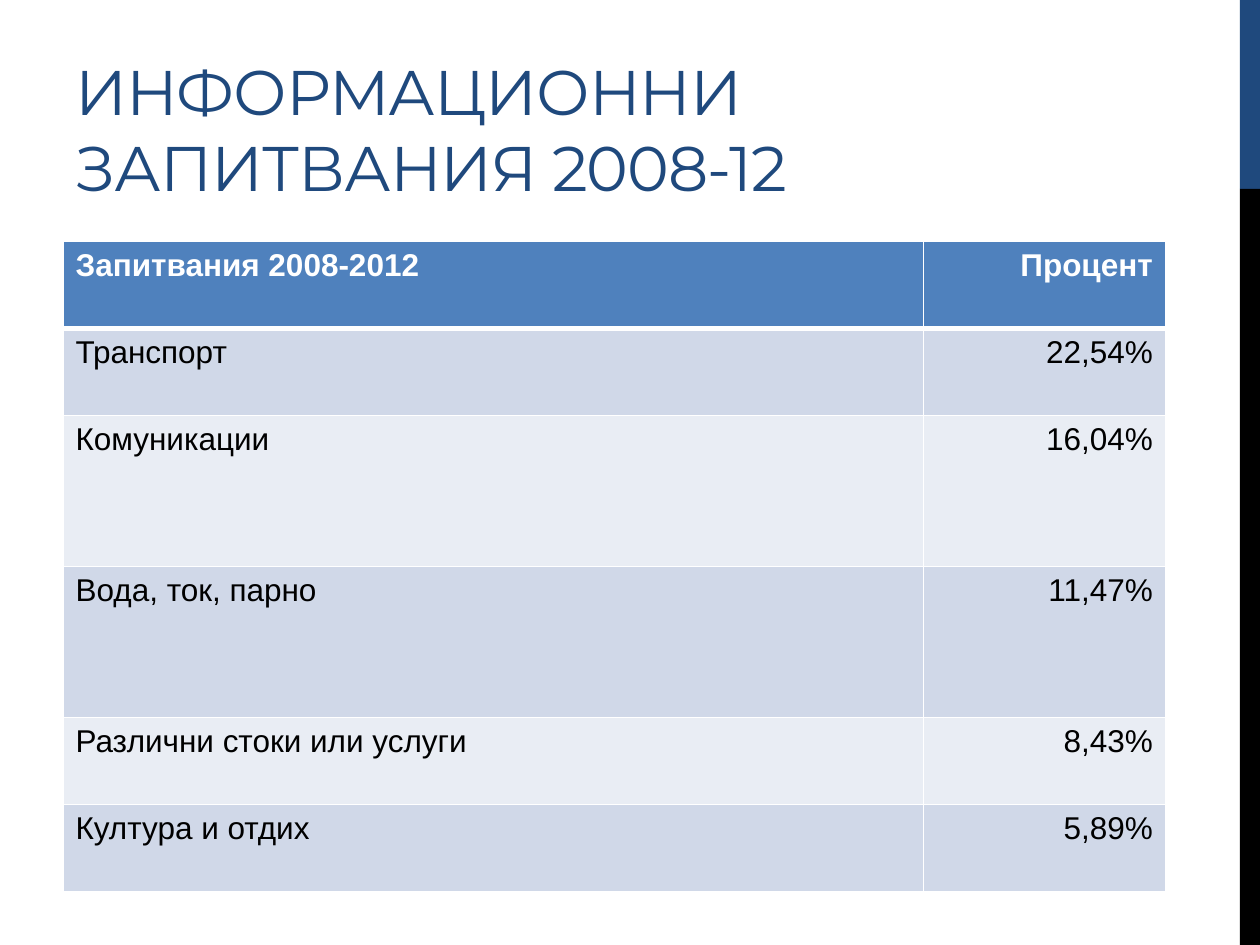
from lxml.etree import SubElement
from pptx import Presentation
from pptx.dml.color import RGBColor
from pptx.enum.shapes import MSO_SHAPE
from pptx.enum.text import MSO_ANCHOR, PP_ALIGN
from pptx.oxml.ns import qn
from pptx.util import Pt

COLORS = {
    "navy": "1F497D",
    "black": "000000",
    "white": "FFFFFF",
    "header": "4F81BD",
    "odd_row": "D0D8E8",
    "even_row": "E9EDF4",
}
INQUIRIES = [
    ("Запитвания 2008-2012", "Процент"),
    ("Транспорт", "22,54%"),
    ("Комуникации", "16,04%"),
    ("Вода, ток, парно", "11,47%"),
    ("Различни стоки или услуги", "8,43%"),
    ("Култура и отдих", "5,89%"),
]
COLUMN_WIDTHS = [491.7, 138.3]
SHORT_ROW, TALL_ROW = 49.8, 86.2
ROW_HEIGHTS = [SHORT_ROW] * 2 + [TALL_ROW] * 2 + [SHORT_ROW] * 2


def rgb(name):
    return RGBColor.from_string(COLORS[name])


def set_font(paragraph, family, size, color, bold=False):
    font = paragraph.font
    font.name, font.size, font.bold = family, Pt(size), bold
    font.color.rgb = rgb(color)


def add_band(slide, top, height, color):
    band = slide.shapes.add_shape(
        MSO_SHAPE.RECTANGLE, Pt(708.5), Pt(top), Pt(11.5), Pt(height))
    band.shadow.inherit = False
    band.fill.solid()
    band.fill.fore_color.rgb = rgb(color)
    band.line.fill.background()


def add_title(slide, text):
    title = slide.shapes.add_textbox(Pt(36), Pt(12), Pt(456), Pt(108))
    frame = title.text_frame
    frame.word_wrap = True
    frame.vertical_anchor = MSO_ANCHOR.BOTTOM
    heading = frame.paragraphs[0]
    run = heading.add_run()
    run.text = text
    set_font(heading, "Montserrat", 36, "navy")
    run.font._element.set("spc", "-60")


def set_borders(cell, top, bottom):
    properties = cell._tc.get_or_add_tcPr()
    for side, width in (("L", 1), ("R", 1), ("T", top), ("B", bottom)):
        border = SubElement(properties, qn(f"a:ln{side}"), w=str(Pt(width)))
        fill = SubElement(border, qn("a:solidFill"))
        SubElement(fill, qn("a:srgbClr"), val=COLORS["white"])


def fill_cell(cell, text, row, column):
    is_header = row == 0
    set_borders(cell, 3 if row == 1 else 1, 3 if is_header else 1)
    cell.fill.solid()
    band = "odd_row" if row % 2 else "even_row"
    cell.fill.fore_color.rgb = rgb("header" if is_header else band)
    cell.text = text
    label = cell.text_frame.paragraphs[0]
    label.alignment = PP_ALIGN.RIGHT if column else PP_ALIGN.LEFT
    set_font(label, "Arial", 18, "white" if is_header else "black", is_header)


def add_inquiry_table(slide):
    table = slide.shapes.add_table(
        len(INQUIRIES), len(COLUMN_WIDTHS), Pt(36), Pt(138),
        Pt(sum(COLUMN_WIDTHS)), Pt(sum(ROW_HEIGHTS))).table
    for column, width in zip(table.columns, COLUMN_WIDTHS):
        column.width = Pt(width)
    for row, height in zip(table.rows, ROW_HEIGHTS):
        row.height = Pt(height)
    for row, texts in enumerate(INQUIRIES):
        for column, text in enumerate(texts):
            fill_cell(table.cell(row, column), text, row, column)


def main():
    presentation = Presentation()
    presentation.slide_width, presentation.slide_height = Pt(720), Pt(540)
    slide = presentation.slides.add_slide(presentation.slide_layouts[6])
    add_band(slide, 0, 108, "navy")
    add_band(slide, 108, 432, "black")
    add_title(slide, "ИНФОРМАЦИОННИ ЗАПИТВАНИЯ 2008-12")
    add_inquiry_table(slide)
    presentation.save("out.pptx")


if __name__ == "__main__":
    main()
